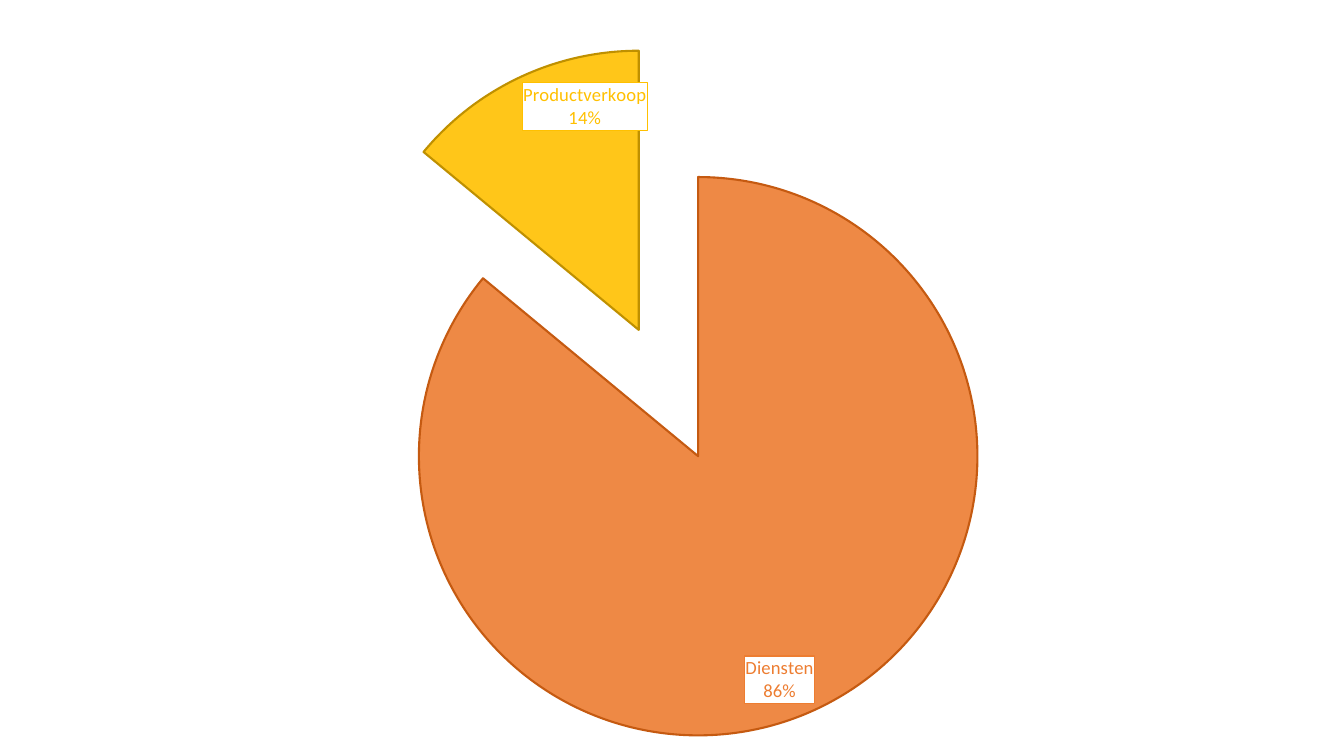
from dataclasses import dataclass

from lxml.etree import SubElement
from pptx import Presentation
from pptx.chart.data import CategoryChartData
from pptx.chart.series import PieSeries
from pptx.dml.color import RGBColor
from pptx.enum.chart import XL_CHART_TYPE, XL_LABEL_POSITION
from pptx.oxml import parse_xml
from pptx.oxml.ns import nsdecls, qn
from pptx.util import Inches, Pt

HUES = {
    "orange": "ED7D31",
    "rust": "C55A11",
    "gold": "FFC000",
    "bronze": "BF9000",
    "white": "FFFFFF",
    "black": "000000",
}


@dataclass
class Slice:
    """One part of the pie."""
    name: str
    value: int
    fill: str
    edge: str


SLICES = [
    Slice("Diensten", 86, "orange", "rust"),
    Slice("Productverkoop", 14, "gold", "bronze"),
]


def label_xml(pos: int, hue: str) -> str:
    """Return a white boxed label with name and share."""
    return f"""<c:dLbl {nsdecls("c", "a")}>
      <c:idx val="{pos}"/><c:numFmt formatCode="0%" sourceLinked="0"/>
      <c:spPr>
        <a:solidFill><a:srgbClr val="{HUES['white']}"/></a:solidFill>
        <a:ln w="12700"><a:solidFill><a:srgbClr val="{hue}"/></a:solidFill></a:ln>
      </c:spPr>
      <c:txPr><a:bodyPr/><a:lstStyle/><a:p><a:pPr><a:defRPr sz="1330" b="0">
        <a:solidFill><a:srgbClr val="{hue}"/></a:solidFill>
        <a:latin typeface="Calibri"/>
      </a:defRPr></a:pPr><a:endParaRPr lang="nl-NL"/></a:p></c:txPr>
      <c:dLblPos val="inEnd"/><c:showLegendKey val="0"/><c:showVal val="0"/>
      <c:showCatName val="1"/><c:showSerName val="0"/><c:showPercent val="1"/>
      <c:showBubbleSize val="0"/><c:separator>\n</c:separator>
    </c:dLbl>"""


def paint(series: PieSeries, pos: int, part: Slice) -> None:
    """Colour one slice and its edge."""
    style = series.points[pos].format
    style.fill.solid()
    style.fill.fore_color.rgb = RGBColor.from_string(HUES[part.fill])
    style.line.color.rgb = RGBColor.from_string(HUES[part.edge])
    style.line.width = Pt(1.5)
    dot = series._element.findall(qn("c:dPt"))[pos]
    tone = dot.find(f"{qn('c:spPr')}/{qn('a:solidFill')}/{qn('a:srgbClr')}")
    SubElement(tone, qn("a:alpha")).set("val", "90000")


def main() -> None:
    """Build the slide with its exploded pie."""
    deck = Presentation()
    deck.slide_width, deck.slide_height = Inches(13.33), Inches(7.5)
    slide = deck.slides.add_slide(deck.slide_layouts[6])

    data = CategoryChartData()
    data.categories = [part.name for part in SLICES]
    data.add_series("Series 1", [part.value for part in SLICES])
    chart = slide.shapes.add_chart(
        XL_CHART_TYPE.PIE, Inches(1.25), Inches(0.3), Inches(10.76), Inches(7.2), data
    ).chart
    chart.has_title = False
    chart.has_legend = False
    chart.font.name = "Calibri"
    chart.font.size = Pt(10)
    chart.font.color.rgb = RGBColor.from_string(HUES["black"])

    plot = chart.plots[0]
    plot.vary_by_categories = True
    series = plot.series[0]
    burst = parse_xml(f'<c:explosion {nsdecls("c")} val="25"/>')
    series._element.find(qn("c:tx")).addnext(burst)

    labels = series.data_labels
    labels.show_value = False
    labels.show_category_name = True
    labels.show_percentage = True
    labels.number_format = "0%"
    labels.number_format_is_linked = False
    labels.position = XL_LABEL_POSITION.INSIDE_END
    for pos, part in enumerate(SLICES):
        paint(series, pos, part)
        labels._element.insert(pos, parse_xml(label_xml(pos, HUES[part.fill])))

    deck.save("out.pptx")


if __name__ == "__main__":
    main()
